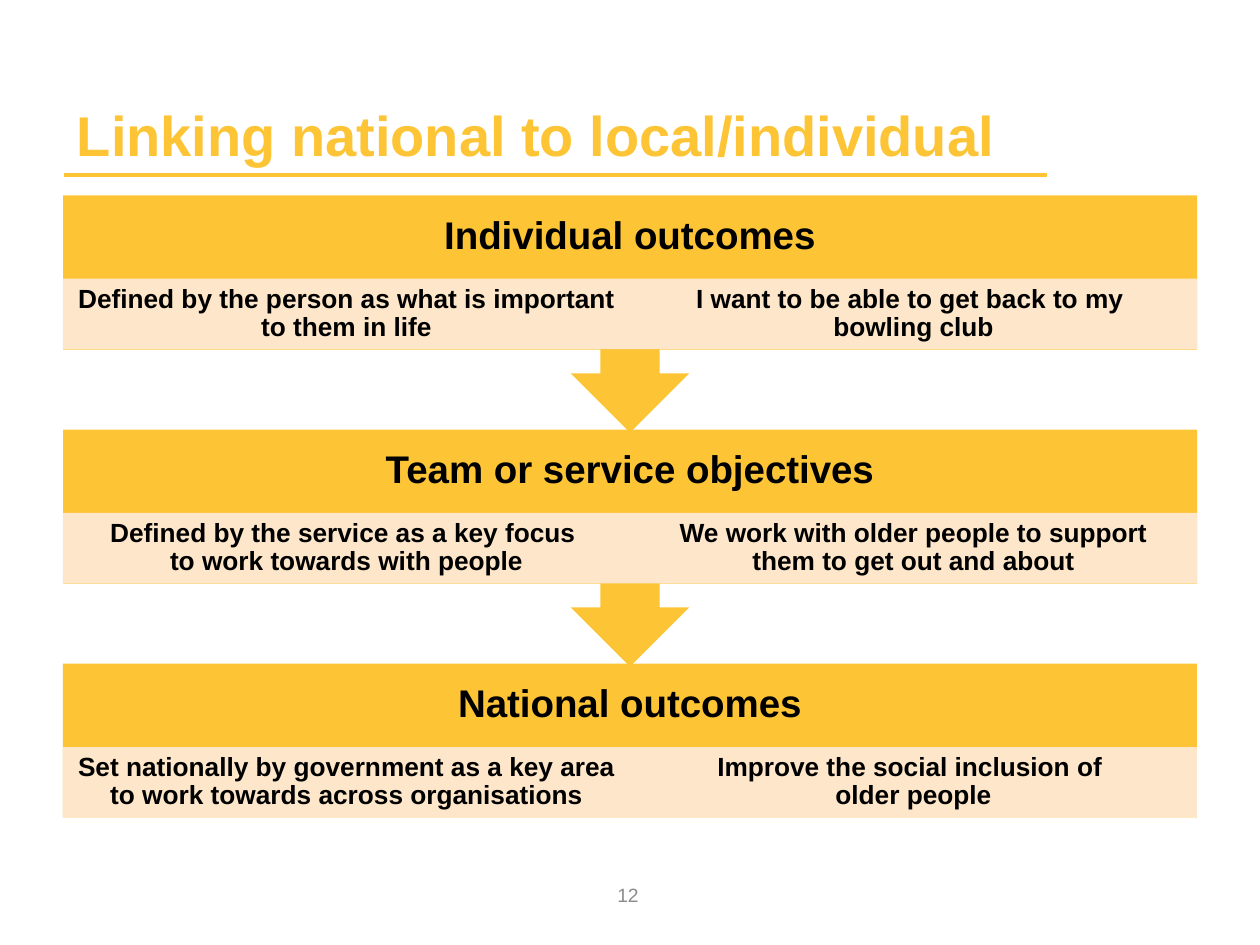
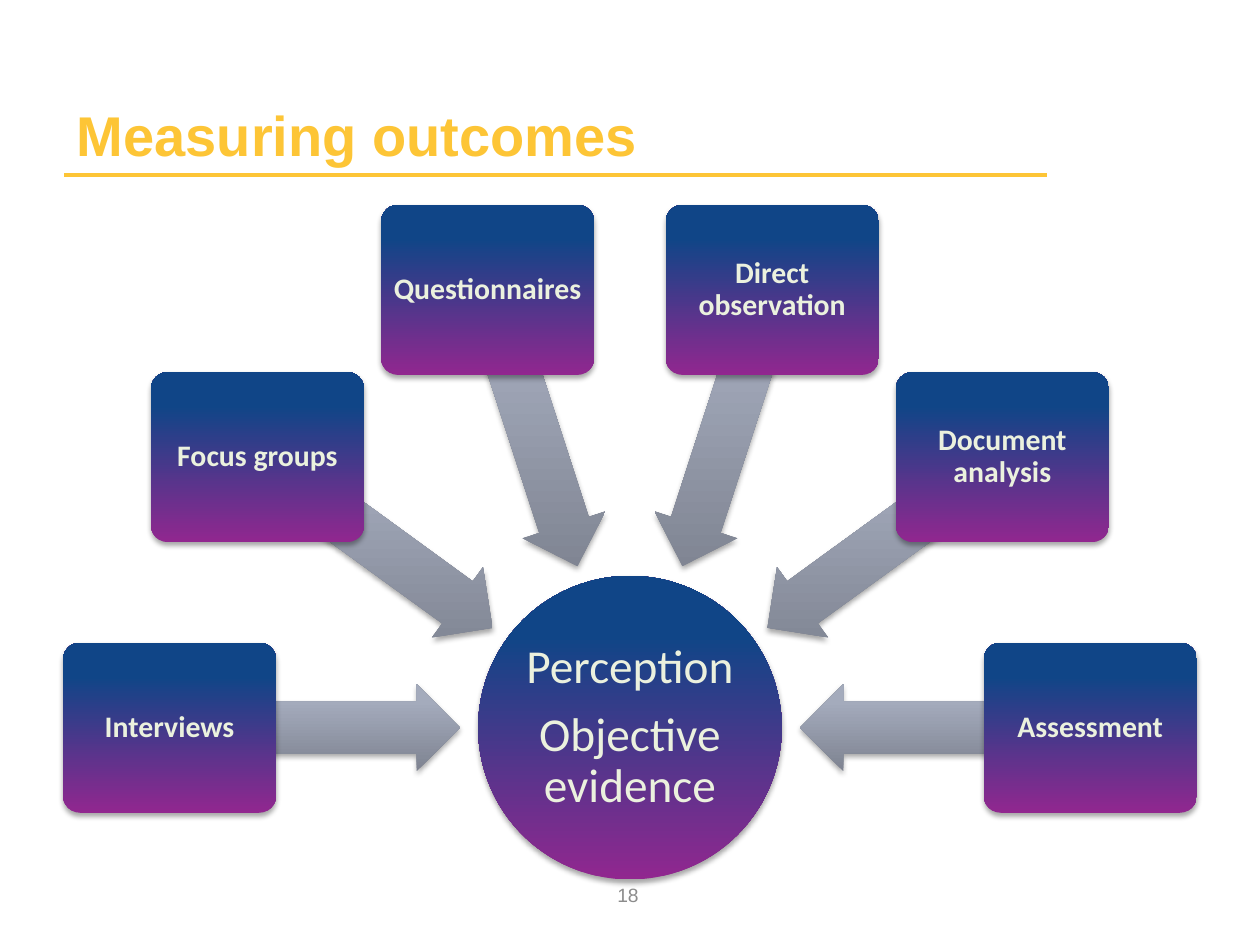
from copy import deepcopy
from math import cos, radians, sin

from lxml import etree
from pptx import Presentation
from pptx.dml.color import RGBColor
from pptx.enum.shapes import MSO_CONNECTOR, MSO_SHAPE
from pptx.enum.text import MSO_ANCHOR, PP_ALIGN
from pptx.oxml import parse_xml
from pptx.oxml.ns import nsdecls, qn
from pptx.util import Cm, Pt

COLORS = {
    "gold": "FDC536",
    "cream": "FDEADA",
    "black": "000000",
    "grey": "8C8C8C",
    "pale": "EBF1DE",
}
GRADIENTS = {
    "purple": [(0, "91278F"), (80, "104587"), (100, "0E458A")],
    "steel": [(0, "7E8391"), (80, "A4ABBC"), (100, "A4ABBE")],
}

LINKING = {
    "title": "Linking national to local/individual",
    "number": "12",
    "levels": [
        ("Individual outcomes",
         ["Defined by the person as what is important to them in life",
          "I want to be able to get back to my \nbowling club"]),
        ("Team or service objectives",
         ["Defined by the service as a key focus \nto work towards with people",
          "We work with older people to support them to get out and about"]),
        ("National outcomes",
         ["Set nationally by government as a key area to work towards across organisations",
          "Improve the social inclusion of \nolder people"]),
    ],
}
MEASURING = {
    "title": "Measuring outcomes",
    "number": "18",
    "hub": ["Perception", "Objective evidence"],
    "methods": ["Interviews", "Focus groups", "Questionnaires",
                "Direct observation", "Document analysis", "Assessment"],
}

MARGIN, CONTENT_WIDTH = 1.27, 22.86
LEVEL_TOP, LEVEL_PITCH = 3.94, 4.72
HEADER_HEIGHT, PANEL_HEIGHT, CALLOUT_HEIGHT = 1.68, 1.42, 4.78
HUB_X, HUB_Y, HUB_SIZE = 12.7, 14.67, 6.12
METHOD_RADIUS, METHOD_SIZE = 9.28, (4.3, 3.43)
ARROW_RADIUS, ARROW_SIZE = 6.36, (5.87, 1.75)


def write(shape, lines, font, size, color, bold=False, align=PP_ALIGN.CENTER,
          anchor=MSO_ANCHOR.MIDDLE, insets=(0.25, 0.13), spacing=0.9):
    text_frame = shape.text_frame
    text_frame.word_wrap = True
    text_frame.vertical_anchor = anchor
    text_frame.margin_left = text_frame.margin_right = Cm(insets[0])
    text_frame.margin_top = text_frame.margin_bottom = Cm(insets[1])
    for index, line in enumerate(lines):
        paragraph = text_frame.add_paragraph() if index else text_frame.paragraphs[0]
        paragraph.text = line
        paragraph.alignment = align
        paragraph.line_spacing = spacing
        if index < len(lines) - 1:
            paragraph.space_after = Pt(size * 0.35)
        for run in paragraph.runs:
            run.font.name = font
            run.font.size = Pt(size)
            run.font.bold = bold
            run.font.color.rgb = RGBColor.from_string(COLORS[color])
        for line_break in paragraph._p.findall(qn("a:br")):
            line_break.append(deepcopy(paragraph.runs[0]._r.rPr))


def add_text(slide, box, lines, *style, **options):
    write(slide.shapes.add_textbox(*map(Cm, box)), lines, *style, **options)


def add_plain(slide, kind, box, color=None):
    shape = slide.shapes.add_shape(kind, *map(Cm, box))
    shape.shadow.inherit = False
    shape.line.fill.background()
    if color:
        shape.fill.solid()
        shape.fill.fore_color.rgb = RGBColor.from_string(COLORS[color])
    return shape


def add_glossy(slide, kind, center_x, center_y, size, gradient):
    width, height = size
    shape = add_plain(slide, kind, (center_x - width / 2, center_y - height / 2, width, height))
    stops = "".join(f'<a:gs pos="{position * 1000}"><a:srgbClr val="{color}"/></a:gs>'
                    for position, color in GRADIENTS[gradient])
    properties = shape._element.spPr
    properties.find(qn("a:prstGeom")).addnext(parse_xml(
        f'<a:gradFill {nsdecls("a")} rotWithShape="0"><a:gsLst>{stops}</a:gsLst>'
        '<a:lin ang="16200000" scaled="0"/></a:gradFill>'))
    properties.find(qn("a:effectLst")).append(parse_xml(
        f'<a:outerShdw {nsdecls("a")} blurRad="40000" dist="23000" dir="5400000" '
        'rotWithShape="0"><a:srgbClr val="000000"><a:alpha val="35000"/></a:srgbClr>'
        '</a:outerShdw>'))
    return shape


def add_slide(presentation, content):
    slide = presentation.slides.add_slide(presentation.slide_layouts[6])
    rule = slide.shapes.add_connector(MSO_CONNECTOR.STRAIGHT, Cm(1.3), Cm(3.53), Cm(21.1), Cm(3.53))
    rule.line.color.rgb = RGBColor.from_string(COLORS["gold"])
    rule.line.width = Pt(2)
    etree.SubElement(rule._element.spPr, qn("a:effectLst"))
    add_text(slide, (1.3, 0.74, 19.8, 2.77), [content["title"]], "Arial", 32, "gold",
             bold=True, align=PP_ALIGN.LEFT, anchor=MSO_ANCHOR.BOTTOM, spacing=1.0)
    add_text(slide, (9.7, 17.53, 5.92, 1.02), [content["number"]], "Arial", 11, "grey", spacing=1.0)
    return slide


def build_linking(presentation):
    slide = add_slide(presentation, LINKING)
    last = len(LINKING["levels"]) - 1
    for index, (heading, details) in enumerate(LINKING["levels"]):
        top = LEVEL_TOP + index * LEVEL_PITCH
        if index == last:
            add_plain(slide, MSO_SHAPE.RECTANGLE,
                      (MARGIN, top, CONTENT_WIDTH, HEADER_HEIGHT + PANEL_HEIGHT), "gold")
        else:
            callout = add_plain(slide, MSO_SHAPE.UP_ARROW_CALLOUT,
                                (MARGIN, top, CONTENT_WIDTH, CALLOUT_HEIGHT), "gold")
            callout.rotation = 180
        add_text(slide, (MARGIN, top, CONTENT_WIDTH, HEADER_HEIGHT), [heading],
                 "Arial", 22, "black", bold=True, insets=(0.43, 0.43))
        panel_width = CONTENT_WIDTH / len(details)
        for column, detail in enumerate(details):
            panel = add_plain(slide, MSO_SHAPE.RECTANGLE,
                              (MARGIN + column * panel_width, top + HEADER_HEIGHT,
                               panel_width, PANEL_HEIGHT), "cream")
            fill_color = panel._element.spPr.find(qn("a:solidFill"))[0]
            etree.SubElement(fill_color, qn("a:alpha"), val="90000")
            write(panel, [detail], "Arial", 15, "black", bold=True, insets=(0.3, 0.05))


def build_measuring(presentation):
    slide = add_slide(presentation, MEASURING)
    hub = add_glossy(slide, MSO_SHAPE.OVAL, HUB_X, HUB_Y, (HUB_SIZE, HUB_SIZE), "purple")
    write(hub, MEASURING["hub"], "Calibri", 27, "pale", insets=(0.05, 0.05))
    step = 180 / (len(MEASURING["methods"]) - 1)
    for index, method in enumerate(MEASURING["methods"]):
        angle = 180 + index * step
        across, down = cos(radians(angle)), sin(radians(angle))
        arrow = add_glossy(slide, MSO_SHAPE.LEFT_ARROW, HUB_X + ARROW_RADIUS * across,
                           HUB_Y + ARROW_RADIUS * down, ARROW_SIZE, "steel")
        arrow.adjustments[0] = 0.6
        arrow.adjustments[1] = 0.5
        arrow.rotation = angle % 360
        box = add_glossy(slide, MSO_SHAPE.ROUNDED_RECTANGLE, HUB_X + METHOD_RADIUS * across,
                         HUB_Y + METHOD_RADIUS * down, METHOD_SIZE, "purple")
        box.adjustments[0] = 0.1
        write(box, [method], "Calibri", 17, "pale", bold=True, insets=(0.1, 0.1))


def main():
    presentation = Presentation()
    presentation.slide_width = Cm(25.4)
    presentation.slide_height = Cm(19.05)
    build_linking(presentation)
    build_measuring(presentation)
    presentation.save("out.pptx")


if __name__ == "__main__":
    main()
